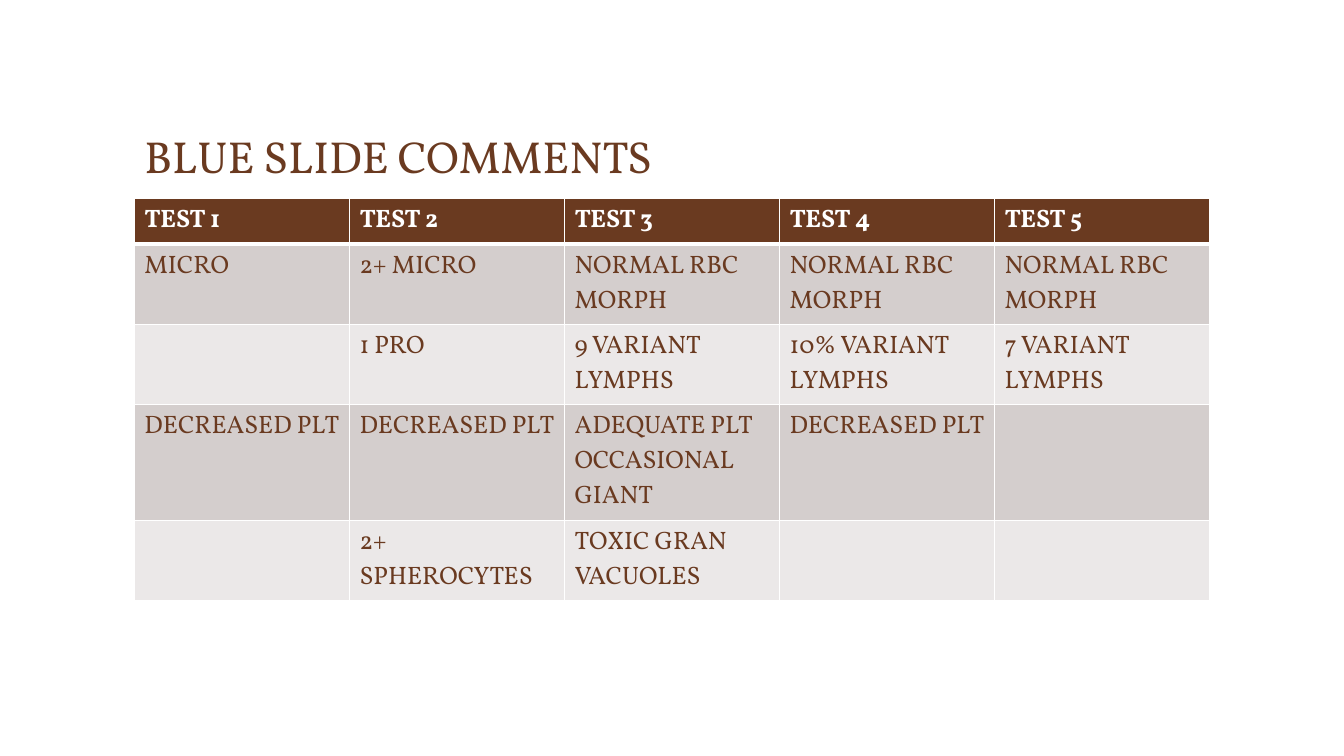
from lxml import etree
from pptx import Presentation
from pptx.dml.color import RGBColor
from pptx.enum.text import MSO_ANCHOR
from pptx.oxml.ns import qn
from pptx.util import Pt

BOTTOM = MSO_ANCHOR.BOTTOM

TITLE = "BLUE SLIDE COMMENTS"
HEADER = ["TEST 1", "TEST 2", "TEST 3", "TEST 4", "TEST 5"]
# A line break inside a cell starts a new paragraph.
COMMENTS = [
    ["MICRO", "2+ MICRO", "NORMAL RBC MORPH", "NORMAL RBC MORPH", "NORMAL RBC MORPH"],
    ["", "1 PRO", "9 VARIANT LYMPHS", "10% VARIANT LYMPHS", "7 VARIANT LYMPHS"],
    ["DECREASED PLT", "DECREASED PLT", "ADEQUATE PLT\nOCCASIONAL GIANT", "DECREASED PLT", ""],
    ["", "2+ SPHEROCYTES", "TOXIC GRAN\nVACUOLES", "", ""],
]
ROW_LINES = [1, 2, 2, 3, 2]

FONT = "Vollkorn"
BROWN, WHITE = "6A3A20", "FFFFFF"
BANDS = ["D4CECD", "EBE8E8"]
LEFT, WIDTH = 96, 768
TITLE_TOP, TITLE_HEIGHT = 34, 96
TABLE_TOP = 142
LINE_HEIGHT, CELL_PADDING = 25.1, 7.2


def rgb(color):
    return RGBColor.from_string(color)


def add_text(tf, text, size, color, bold=False):
    for i, line in enumerate(text.split("\n")):
        p = tf.paragraphs[0] if i == 0 else tf.add_paragraph()
        p.font.size = Pt(size)
        if line:
            r = p.add_run()
            r.text = line
            r.font.name = FONT
            r.font.size = Pt(size)
            r.font.bold = bold
            r.font.color.rgb = rgb(color)


def set_borders(cell, top, bottom):
    """Draw white cell borders: 1 pt at the sides, given widths above and below."""
    tc_pr = cell._tc.get_or_add_tcPr()
    widths = {"a:lnL": 1, "a:lnR": 1, "a:lnT": top, "a:lnB": bottom}
    for i, (tag, width) in enumerate(widths.items()):
        ln = etree.Element(qn(tag), w=str(Pt(width)))
        fill = etree.SubElement(ln, qn("a:solidFill"))
        etree.SubElement(fill, qn("a:srgbClr"), val=WHITE)
        tc_pr.insert(i, ln)


def add_title(slide):
    sp = slide.shapes.add_textbox(Pt(LEFT), Pt(TITLE_TOP), Pt(WIDTH), Pt(TITLE_HEIGHT))
    tf = sp.text_frame
    tf.word_wrap = True
    tf.vertical_anchor = BOTTOM
    tf.margin_bottom = 0
    add_text(tf, TITLE, 32, BROWN)


def add_comments_table(slide):
    rows = [HEADER] + COMMENTS
    heights = [n * LINE_HEIGHT + CELL_PADDING for n in ROW_LINES]
    table = slide.shapes.add_table(len(rows), len(HEADER), Pt(LEFT), Pt(TABLE_TOP),
                                   Pt(WIDTH), Pt(sum(heights))).table
    for column in table.columns:
        column.width = Pt(WIDTH / len(HEADER))
    for i, texts in enumerate(rows):
        table.rows[i].height = Pt(heights[i])
        is_header = i == 0
        for j, text in enumerate(texts):
            cell = table.cell(i, j)
            cell.fill.solid()
            cell.fill.fore_color.rgb = rgb(BROWN if is_header else BANDS[(i - 1) % 2])
            set_borders(cell, top=3 if i == 1 else 1, bottom=3 if is_header else 1)
            add_text(cell.text_frame, text, 18, WHITE if is_header else BROWN, is_header)


def main():
    prs = Presentation()
    prs.slide_width, prs.slide_height = Pt(960), Pt(540)
    slide = prs.slides.add_slide(prs.slide_layouts[6])
    add_title(slide)
    add_comments_table(slide)
    prs.save("out.pptx")


if __name__ == "__main__":
    main()
